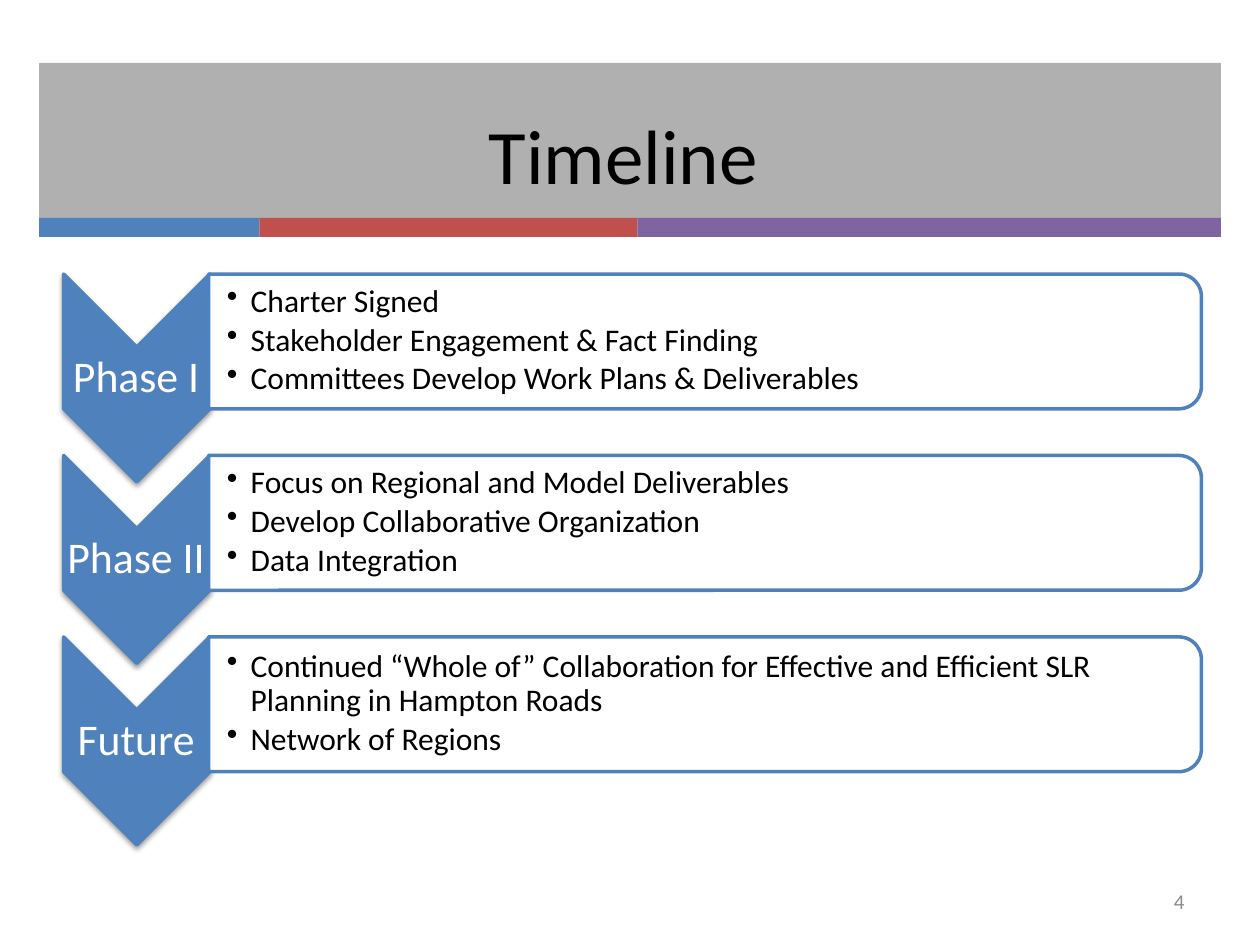
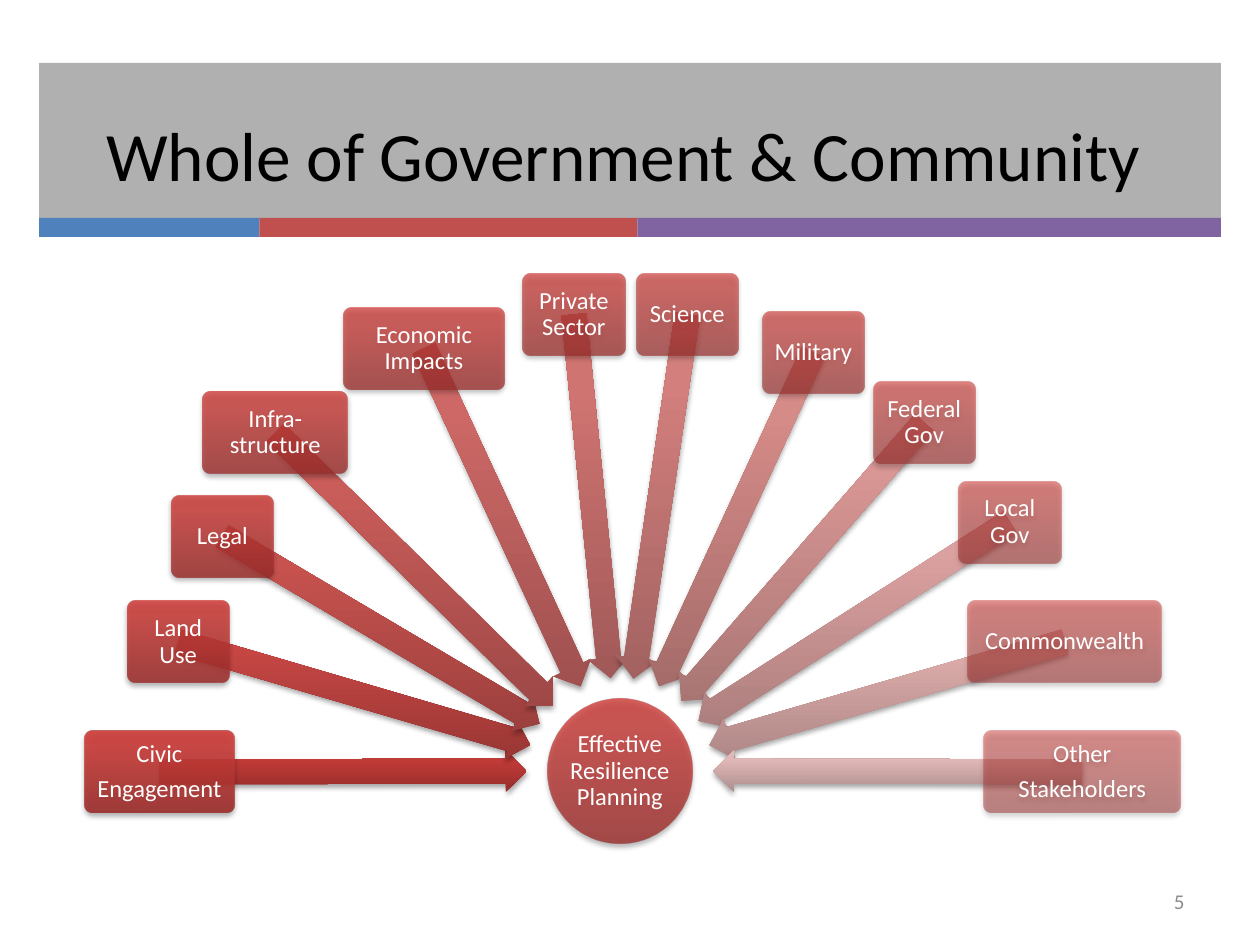
import math
from dataclasses import dataclass

from lxml import etree
from pptx import Presentation
from pptx import util as u
from pptx.dml.color import RGBColor
from pptx.enum import shapes, text
from pptx.oxml import parse_xml
from pptx.oxml.ns import nsdecls, qn


@dataclass(frozen=True)
class Theme:
    font: str = "Calibri"
    band: str = "AFB0AF"
    blue: str = "4F81BD"
    red: str = "C0504D"
    purple: str = "8064A2"
    white: str = "FFFFFF"
    black: str = "000000"
    number: str = "8C8C8C"
    node: tuple = ("9C2F2D", "CB3E3A", "CE3B37")
    first_arrow: tuple = ("952D2B", "C23B37", "C53935")
    last_arrow: tuple = ("AD8E8D", "E0B8B7", "E2B8B7")
    phase_size: float = 25
    bullet_size: float = 18
    node_size: float = 14
    number_size: float = 12


theme = Theme()
SHAPE = shapes.MSO_SHAPE
ALIGN = text.PP_ALIGN


def paint(shape, fill, line=None, alpha=100, shadow=None):
    """Fill with one colour or a vertical three-stop gradient; shadow is (opacity, distance)."""
    shape.shadow.inherit = False
    shape.fill.solid()
    if isinstance(fill, str):
        shape.fill.fore_color.rgb = RGBColor.from_string(fill)
    else:
        stops = "".join(
            f'<a:gs pos="{place * 1000}"><a:srgbClr val="{colour}">'
            f'<a:alpha val="{round(alpha * 1000)}"/></a:srgbClr></a:gs>'
            for place, colour in zip((0, 80, 100), fill))
        solid = shape._element.spPr.find(qn("a:solidFill"))
        solid.getparent().replace(solid, parse_xml(
            f'<a:gradFill {nsdecls("a")} rotWithShape="0"><a:gsLst>{stops}</a:gsLst>'
            '<a:lin ang="16200000" scaled="0"/></a:gradFill>'))
    if line:
        shape.line.color.rgb = RGBColor.from_string(line)
        shape.line.width = u.Pt(2)
    else:
        shape.line.fill.background()
    if shadow:
        opacity, distance = shadow
        shape._element.spPr.find(qn("a:effectLst")).append(parse_xml(
            f'<a:outerShdw {nsdecls("a")} blurRad="{u.Pt(3.1)}" dist="{u.Pt(distance)}" '
            'dir="5400000" rotWithShape="0"><a:srgbClr val="000000">'
            f'<a:alpha val="{opacity * 1000}"/></a:srgbClr></a:outerShdw>'))


def write(box, lines, size, colour, align=ALIGN.CENTER, insets=(0.1, 0.05, 0.1, 0.05),
          spacing=0.9, after=0.35, bullet=False):
    """Set the lines of a box; after is the gap below each as a share of the type size."""
    frame = box.text_frame
    frame.word_wrap = True
    frame.vertical_anchor = text.MSO_ANCHOR.MIDDLE
    (frame.margin_left, frame.margin_top,
     frame.margin_right, frame.margin_bottom) = map(u.Inches, insets)
    frame.text = "\n".join(lines)
    for para in frame.paragraphs:
        para.alignment = align
        para.line_spacing = spacing
        para.space_after = u.Pt(round(size * after, 1))
        if bullet:
            props = para._p.get_or_add_pPr()
            props.set("marL", str(u.Inches(0.19)))
            props.set("indent", str(-u.Inches(0.19)))
            etree.SubElement(props, qn("a:buChar")).set("char", "•")
        for span in para.runs:
            span.font.name = theme.font
            span.font.size = u.Pt(size)
            span.font.color.rgb = RGBColor.from_string(colour)


deck = Presentation()
deck.slide_width, deck.slide_height = u.Inches(10), u.Inches(7.5)

# Shared frame: title band, colour stripe, title and page number
bands = [
    (0.31, 0.5, 9.38, 1.24, theme.band),
    (0.31, 1.73, 1.75, 0.15, theme.blue),
    (2.06, 1.73, 3, 0.15, theme.red),
    (5.06, 1.73, 4.63, 0.15, theme.purple),
]
pages = []
for title, title_size, number in [("Timeline", 44, "4"),
                                  ("Whole of Government & Community", 39.6, "5")]:
    page = deck.slides.add_slide(deck.slide_layouts[6])
    for *place, colour in bands:
        band = page.shapes.add_shape(SHAPE.RECTANGLE, *map(u.Inches, place))
        paint(band, colour)
    title_box = page.shapes.add_textbox(*map(u.Inches, (0.3, 0.69, 9.4, 1.06)))
    write(title_box, [title], title_size, theme.black,
          insets=(0.1, 0.05, 0.2, 0.05), spacing=1, after=0)
    number_box = page.shapes.add_textbox(*map(u.Inches, (7.17, 6.95, 2.33, 0.4)))
    write(number_box, [number], theme.number_size, theme.number, ALIGN.RIGHT,
          spacing=1, after=0)
    pages.append(page)
timeline, community = pages

# Timeline: one chevron and one bullet panel per phase
phases = [
    ("Phase I", ["Charter Signed",
                 "Stakeholder Engagement & Fact Finding",
                 "Committees Develop Work Plans & Deliverables"]),
    ("Phase II", ["Focus on Regional and Model Deliverables",
                  "Develop Collaborative Organization",
                  "Data Integration"]),
    ("Future", ["Continued “Whole of” Collaboration for Effective and Efficient SLR "
                "Planning in Hampton Roads",
                "Network of Regions"]),
]
for row, (phase, steps) in enumerate(phases):
    drop = row * 1.44
    chevron = timeline.shapes.add_shape(
        SHAPE.CHEVRON, *map(u.Inches, (0.26, 2.42 + drop, 1.65, 1.16)))
    chevron.rotation = 90
    paint(chevron, theme.blue, theme.blue, shadow=(38, 1.6))
    label = timeline.shapes.add_textbox(*map(u.Inches, (0.5, 2.75 + drop, 1.16, 0.5)))
    write(label, [phase], theme.phase_size, theme.white, insets=(0.02,) * 4)

    panel = timeline.shapes.add_shape(
        SHAPE.ROUND_2_SAME_RECTANGLE, *map(u.Inches, (5.06, -1.23 + drop, 1.07, 7.88)))
    panel.rotation = 90
    paint(panel, theme.white, theme.blue)
    step_box = timeline.shapes.add_textbox(
        *map(u.Inches, (1.66, 2.22 + drop, 7.83, 0.97)))
    write(step_box, steps, theme.bullet_size, theme.black, ALIGN.LEFT,
          (0.14, 0.01, 0.01, 0.01), after=0.15, bullet=True)

# Community: central hub
hub_x, hub_y, hub_size = 4.92, 6.12, 1.15
hub = community.shapes.add_shape(
    SHAPE.OVAL, *map(u.Inches, (hub_x - hub_size / 2, hub_y - hub_size / 2,
                                hub_size, hub_size)))
paint(hub, theme.node, alpha=80, shadow=(35, 1.8))
write(hub, ["Effective Resilience Planning"], theme.node_size, theme.white,
      insets=(0.01,) * 4)

# Community: partners as (lines, left, top, width), fading from first to last
partners = [
    (["Civic", "Engagement"], 0.67, 5.8, 1.19),
    (["Land Use"], 1.01, 4.77, 0.81),
    (["Legal"], 1.36, 3.93, 0.81),
    (["Infra-structure"], 1.61, 3.11, 1.15),
    (["Economic Impacts"], 2.73, 2.44, 1.27),
    (["Private Sector"], 4.15, 2.17, 0.81),
    (["Science"], 5.05, 2.17, 0.81),
    (["Military"], 6.05, 2.47, 0.81),
    (["Federal Gov"], 6.93, 3.03, 0.81),
    (["Local Gov"], 7.61, 3.82, 0.81),
    (["Commonwealth"], 7.68, 4.77, 1.54),
    (["Other", "Stakeholders"], 7.81, 5.8, 1.56),
]
box_height, arrow_height, hub_gap = 0.65, 0.33, 0.74
for index, (lines, left, top, width) in enumerate(partners):
    share = index / (len(partners) - 1)
    arrow_colours = []
    for start, end in zip(theme.first_arrow, theme.last_arrow):
        pairs = zip(bytes.fromhex(start), bytes.fromhex(end))
        arrow_colours.append("".join(f"{round(a + (b - a) * share):02X}" for a, b in pairs))

    # Arrow from the middle of the box to just outside the hub
    box_x, box_y = left + width / 2, top + box_height / 2
    run, rise = hub_x - box_x, hub_y - box_y
    distance = math.hypot(run, rise)
    length = distance - hub_gap
    middle_x = box_x + run * length / distance / 2
    middle_y = box_y + rise * length / distance / 2
    arrow = community.shapes.add_shape(
        SHAPE.LEFT_ARROW, *map(u.Inches, (middle_x - length / 2, middle_y - arrow_height / 2,
                                          length, arrow_height)))
    arrow.adjustments[0] = 0.6
    arrow.rotation = math.degrees(math.atan2(rise, run)) + 180
    paint(arrow, arrow_colours, shadow=(35, 1.8))

    box = community.shapes.add_shape(
        SHAPE.ROUNDED_RECTANGLE, *map(u.Inches, (left, top, width, box_height)))
    box.adjustments[0] = 0.1
    paint(box, theme.node, alpha=90 - 40 * share, shadow=(35, 1.8))
    write(box, lines, theme.node_size, theme.white, insets=(0.03,) * 4)

deck.save("out.pptx")
